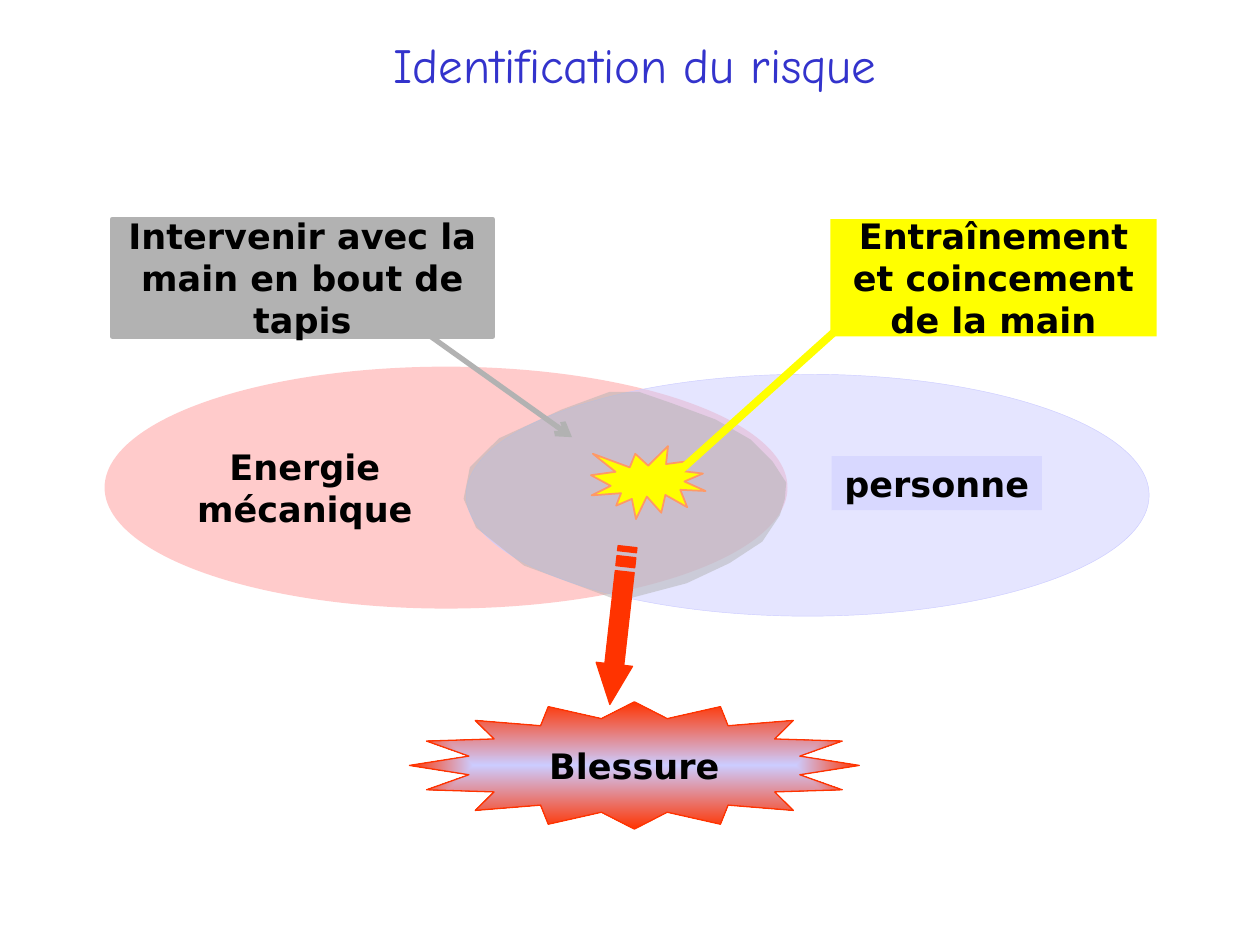
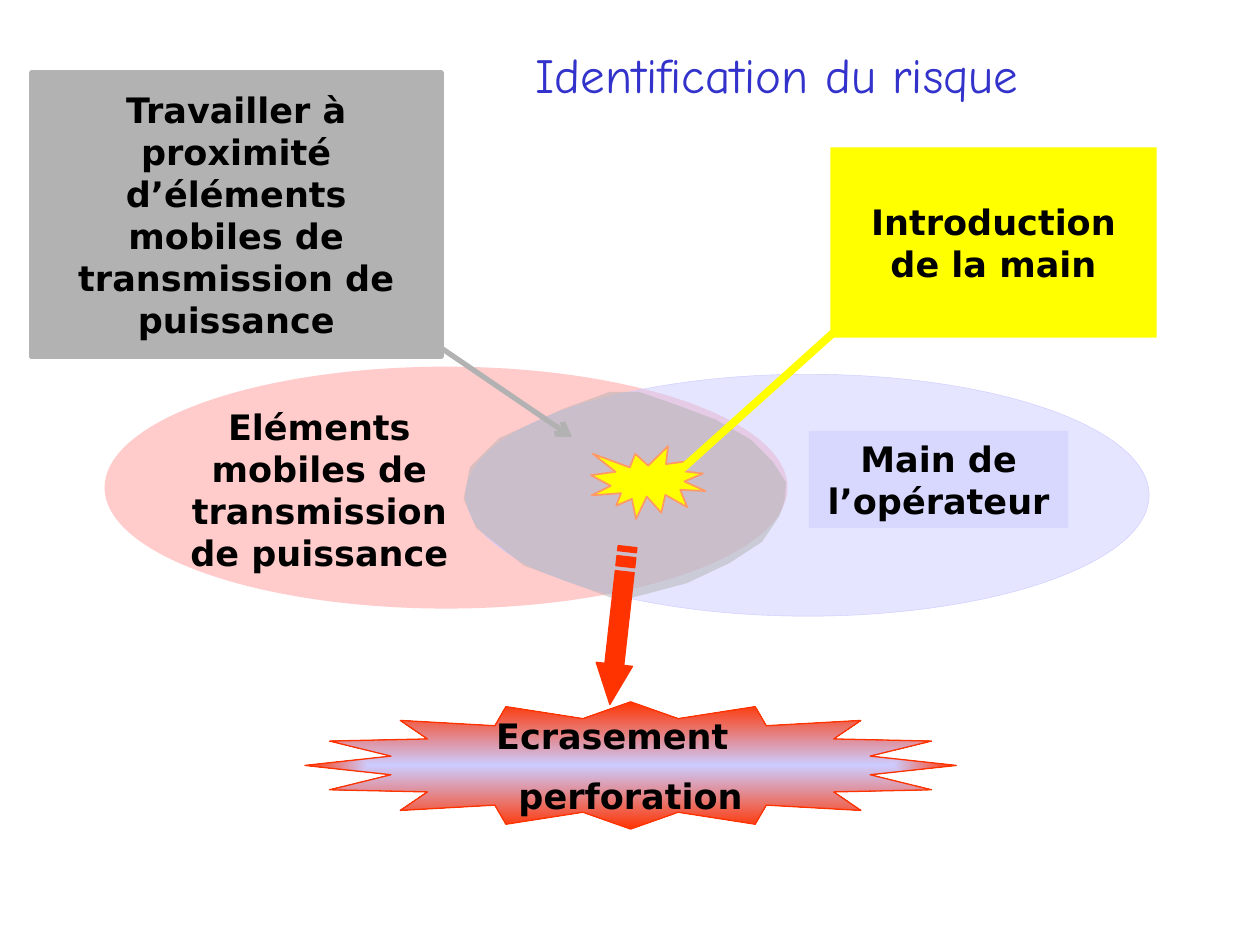
from lxml.etree import SubElement as Sub
from pptx import Presentation
from pptx.dml.color import RGBColor as Rgb
from pptx.enum.shapes import MSO_CONNECTOR as Link, MSO_SHAPE as Kind
from pptx.enum.text import MSO_ANCHOR as Anchor, PP_ALIGN as Align
from pptx.oxml.ns import qn
from pptx.util import Inches, Pt

HUES = {
    "title": "3333CC",
    "text": "000000",
    "danger": "FF9999",
    "person": "CCCCFF",
    "task": "B2B2B2",
    "event": "FFFF00",
    "edge": "FF9966",
    "harm": "FF3300",
}
ZONE = [
    (5.07, 3.11), (5.33, 3.2), (5.68, 3.33), (5.96, 3.49), (6.13, 3.66),
    (6.24, 3.83), (6.23, 3.96), (6.19, 4.09), (6.05, 4.3), (5.79, 4.47),
    (5.45, 4.63), (4.92, 4.77), (4.16, 4.49), (3.78, 4.19), (3.68, 3.96),
    (3.73, 3.71), (3.96, 3.48), (4.46, 3.25), (4.84, 3.11),
]
# The arrow points right before it is turned
ARROW = [
    [(0, 0.07), (0.04, 0.07), (0.04, 0.22), (0, 0.22)],
    [(0.08, 0.07), (0.16, 0.07), (0.16, 0.22), (0.08, 0.22)],
    [(0.2, 0.07), (0.94, 0.07), (0.94, 0), (1.26, 0.145),
     (0.94, 0.29), (0.94, 0.22), (0.2, 0.22)],
]


def hue(name):
    return Rgb.from_string(HUES[name])


def paint(shape, fill, alpha=None, line=None, width=1):
    """Set fill and outline; alpha is the opacity in percent."""
    shape.shadow.inherit = False
    shape.fill.solid()
    shape.fill.fore_color.rgb = hue(fill)
    if alpha:
        tone = shape.fill._xPr.find(qn("a:solidFill"))[0]
        Sub(tone, qn("a:alpha"), val=str(alpha * 1000))
    if line:
        shape.line.color.rgb = hue(line)
        shape.line.width = Pt(width)
    else:
        shape.line.fill.background()


def write(shape, text, size=20, font="DejaVu Sans", color="text", bold=True,
          anchor=Anchor.MIDDLE, inset=None):
    frame = shape.text_frame
    frame.word_wrap = True
    frame.vertical_anchor = anchor
    if inset is not None:
        frame.margin_left = frame.margin_right = inset
        frame.margin_top = frame.margin_bottom = inset
    for row, part in enumerate(text.split("\n")):
        para = frame.add_paragraph() if row else frame.paragraphs[0]
        para.alignment = Align.CENTER
        if row:
            para.space_before = Pt(10)
        run = para.add_run()
        run.text = part
        run.font.name, run.font.size, run.font.bold = font, Pt(size), bold
        run.font.color.rgb = hue(color)


def put(slide, kind, box, fill, **look):
    shape = slide.shapes.add_shape(kind, *map(Inches, box))
    paint(shape, fill, **look)
    return shape


def label(slide, box, text, **form):
    write(slide.shapes.add_textbox(*map(Inches, box)), text, **form)


def trace(slide, loops, fill, left=0, top=0, **look):
    """Draw closed outlines as one freeform, moved by left and top."""
    loops = [[(Inches(left + x), Inches(top + y)) for x, y in loop]
             for loop in loops]
    pen = slide.shapes.build_freeform(*loops[0][0])
    for num, loop in enumerate(loops):
        if num:
            pen.move_to(*loop[0])
        pen.add_line_segments(loop[1:], close=True)
    shape = pen.convert_to_shape()
    paint(shape, fill, **look)
    return shape


def join(slide, start, end, color, width, head=False):
    line = slide.shapes.add_connector(
        Link.STRAIGHT, *map(Inches, (*start, *end)))
    line.line.color.rgb = hue(color)
    line.line.width = Pt(width)
    if head:
        Sub(line.line._get_or_add_ln(), qn("a:headEnd"), type="arrow")
    Sub(line._element.spPr, qn("a:effectLst"))


def burst(slide, left, width, text):
    """Add the star of the injury, shaded from its centre to its rim."""
    star = put(slide, Kind.STAR_16_POINT, (left, 5.57, width, 1.01), "harm",
               line="harm", width=0.75)
    star.adjustments[0] = 0.375
    star.fill.gradient()
    for stop, name in zip(star.fill.gradient_stops, ("person", "harm")):
        stop.color.rgb = hue(name)
    grad = star._element.spPr.find(qn("a:gradFill"))
    grad.remove(grad.find(qn("a:lin")))
    way = Sub(grad, qn("a:path"), path="shape")
    Sub(way, qn("a:fillToRect"), l="50000", t="50000", r="50000", b="50000")
    write(star, text, inset=0)
    return star


def stagger(star, step):
    """Move the first line left and keep the others centred."""
    frame = star.text_frame
    frame.margin_right = Inches(step)
    for para in frame.paragraphs[1:]:
        props = para._p.get_or_add_pPr()
        props.set("marL", str(Inches(step)))
        props.set("indent", "0")


def risk(deck, title, danger, person, task, tail, event, harm):
    """Add one risk slide; each item is a box and its text."""
    slide = deck.slides.add_slide(deck.slide_layouts[6])
    label(slide, *title, size=28, font="Comic Neue", color="title", bold=False)

    put(slide, Kind.OVAL, (0.83, 2.91, 5.42, 1.92), "danger", alpha=50)
    label(slide, *danger, anchor=Anchor.TOP)
    put(slide, Kind.OVAL, (3.7, 2.97, 5.42, 1.92), "person", alpha=50,
        line="person", width=0.25)
    box, text = person
    write(put(slide, Kind.RECTANGLE, box, "person", alpha=50), text,
          anchor=Anchor.TOP)

    trace(slide, [ZONE], "task", alpha=50)
    join(slide, (4.54, 3.47), tail, "task", 3, head=True)
    arrow = trace(slide, ARROW, "harm", 4.28, 4.82, line="harm", width=0.75)
    arrow.rotation = 96.4
    star = burst(slide, *harm)

    put(slide, Kind.EXPLOSION1, (4.69, 3.54, 0.91, 0.58), "event", line="edge")
    box, text = event
    write(put(slide, Kind.RECTANGLE, box, "event"), text)
    join(slide, (5.37, 3.76), (6.66, 2.6), "event", 4.5)
    box, text = task
    write(put(slide, Kind.RECTANGLE, box, "task", line="task", width=3), text)
    return star


def main():
    deck = Presentation()
    deck.slide_width, deck.slide_height = Inches(10), Inches(7.5)
    name = "Identification du risque"
    risk(
        deck,
        title=((0.58, 0.17, 8.92, 0.67), name),
        danger=((1.36, 3.49, 2.12, 0.77), "Energie mécanique"),
        person=((6.6, 3.62, 1.67, 0.43), "personne"),
        task=((0.89, 1.74, 3.02, 0.93),
              "Intervenir avec la main en bout de tapis"),
        tail=(3.32, 2.6),
        event=((6.59, 1.74, 2.59, 0.93),
               "Entraînement et coincement de la main"),
        harm=(3.25, 3.57, "Blessure"),
    )
    star = risk(
        deck,
        title=((3.33, 0.25, 5.67, 0.67), name),
        danger=((1.25, 3.17, 2.57, 1.43),
                "Eléments mobiles de transmission de puissance"),
        person=((6.42, 3.42, 2.06, 0.77), "Main de l’opérateur"),
        task=((0.25, 0.58, 3.25, 2.25),
              "Travailler à proximité d’éléments mobiles de transmission "
              "de puissance"),
        tail=(2.75, 2.25),
        event=((6.59, 1.17, 2.59, 1.51), "Introduction de la main"),
        harm=(2.42, 5.17, "Ecrasement\nperforation"),
    )
    stagger(star, 0.29)
    deck.save("out.pptx")


if __name__ == "__main__":
    main()
